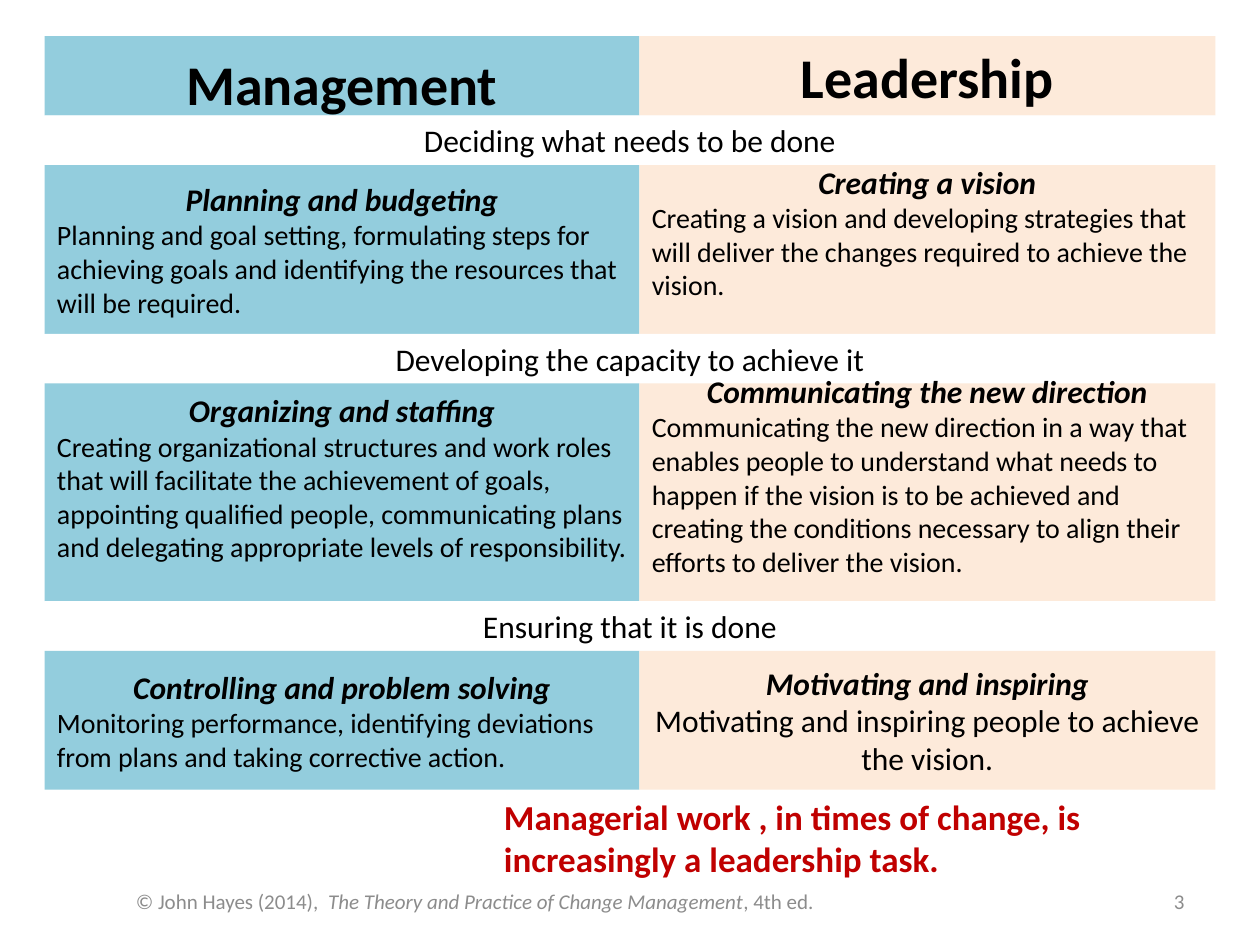
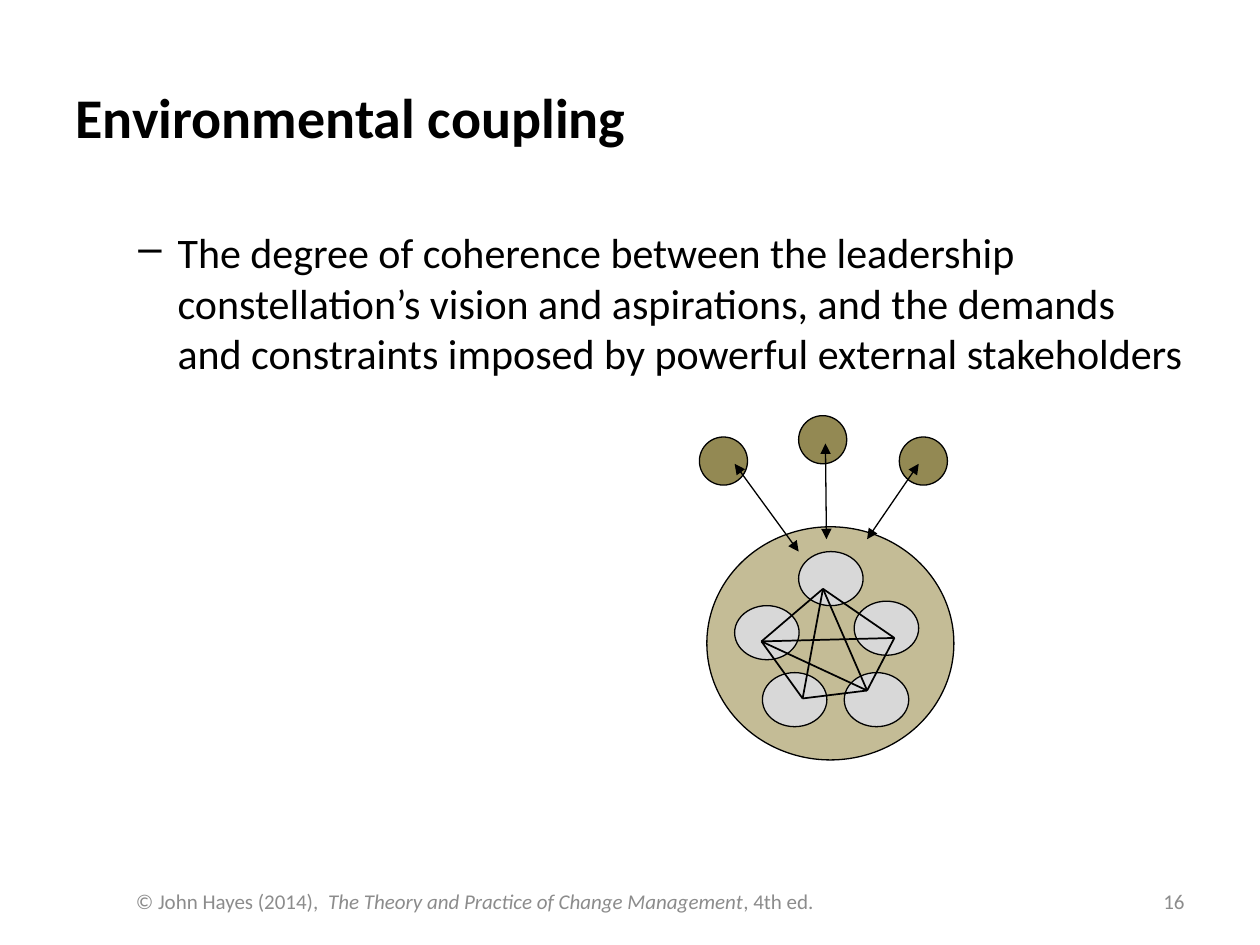
from itertools import combinations

from lxml import etree
from pptx import Presentation
from pptx import util as u
from pptx.dml.color import RGBColor
from pptx.enum import shapes, text
from pptx.oxml.ns import qn

FONT = "Calibri"
BLACK = RGBColor(0x00, 0x00, 0x00)
WHITE = RGBColor(0xFF, 0xFF, 0xFF)
GREY = RGBColor(0x8C, 0x8C, 0x8C)
RED = RGBColor(0xC0, 0x00, 0x00)
BLUE = RGBColor(0x93, 0xCD, 0xDD)
PEACH = RGBColor(0xFD, 0xEA, 0xDA)
SAND = RGBColor(0xC4, 0xBC, 0x96)
SILVER = RGBColor(0xD8, 0xD8, 0xD8)
OLIVE = RGBColor(0x93, 0x89, 0x53)

LEFT, MIDDLE, RIGHT, TOP = 0.9, 12.89, 24.5, 0.73
HEADER_HEIGHT, BAND_HEIGHT = 1.6, 1.0
CENTER = text.PP_ALIGN.CENTER
START = text.PP_ALIGN.LEFT

STAGES = [
    ("Deciding what needs to be done", 3.4,
     ("Planning and budgeting",
      "Planning and goal setting, formulating steps for achieving goals and "
      "identifying the resources that will be required.", 0),
     ("Creating a vision",
      "Creating a vision and developing strategies that will deliver the "
      "changes required to achieve the vision.", 0.7)),
    ("Developing the capacity to achieve it", 4.39,
     ("Organizing and staffing",
      "Creating organizational structures and work roles that will facilitate "
      "the achievement of goals, appointing qualified people, communicating "
      "plans and delegating appropriate levels of responsibility.", 0.6),
     ("Communicating the new direction",
      "Communicating the new direction in a way that enables people to "
      "understand what needs to happen if the vision is to be achieved and "
      "creating the conditions necessary to align their efforts to deliver "
      "the vision.", 0.7)),
    ("Ensuring that it is done", 2.8,
     ("Controlling and problem solving",
      "Monitoring performance, identifying deviations from plans and taking "
      "corrective action.", 0),
     ("Motivating and inspiring",
      "Motivating and inspiring people to achieve the vision.", 0)),
]


class Sketch:
    def __init__(self, deck):
        self.deck = deck
        self.page = None

    def new_page(self, number, title=None):
        layout = self.deck.slide_layouts[5 if title else 6]
        self.page = self.deck.slides.add_slide(layout)
        if title:
            self.title(title)
        footer = self.label(2.49, 17.65, 19.4, 1.02, middle=True)
        para = self.paragraph(footer, "© John Hayes (2014),  ", 12, GREY)
        for words, italic in (("The Theory and Practice of Change Management", True),
                              (", 4th ed.", False)):
            span = para.add_run()
            span.text = words
            span.font.italic = italic
        corner = self.label(18.21, 17.65, 5.92, 1.02, middle=True)
        self.paragraph(corner, str(number), 12, GREY, align=text.PP_ALIGN.RIGHT)

    def title(self, words):
        box = self.page.shapes.title
        box.left, box.top, box.width, box.height = map(u.Cm, (1.27, 0.76, 22.86, 3.18))
        box.text_frame.vertical_anchor = text.MSO_ANCHOR.MIDDLE
        self.paragraph(box.text_frame, words, 32, bold=True)

    def paragraph(self, frame, words, size, color=BLACK, bold=False, italic=False,
                  align=START):
        para = frame.add_paragraph() if frame.text else frame.paragraphs[0]
        para.text = words
        para.alignment = align
        font = para.font
        font.name, font.size, font.color.rgb = FONT, u.Pt(size), color
        font.bold, font.italic = bold, italic
        return para

    def label(self, left, top, width, height, middle=False):
        box = self.page.shapes.add_textbox(*map(u.Cm, (left, top, width, height)))
        frame = box.text_frame
        frame.word_wrap = True
        if middle:
            frame.vertical_anchor = text.MSO_ANCHOR.MIDDLE
        return frame

    def bullet(self, frame, words, size):
        para = self.paragraph(frame, words, size)
        para.space_before = u.Pt(5)
        properties = para._p.get_or_add_pPr()
        properties.set("marL", str(u.Cm(2.06)))
        properties.set("indent", str(u.Cm(-0.79)))
        mark = etree.Element(qn("a:buChar"), char="–")
        properties.find(qn("a:defRPr")).addprevious(mark)

    def shape(self, kind, left, top, width, height, fill, outlined=False):
        shape = self.page.shapes.add_shape(kind, *map(u.Cm, (left, top, width, height)))
        shape.shadow.inherit = False
        shape.fill.solid()
        shape.fill.fore_color.rgb = fill
        if outlined:
            shape.line.color.rgb = BLACK
            shape.line.width = u.Pt(0.75)
        else:
            shape.line.fill.background()
        return shape

    def panel(self, left, top, right, height, fill, lower=0, lift=0):
        shape = self.shape(shapes.MSO_SHAPE.RECTANGLE, left, top, right - left,
                           height, fill)
        frame = shape.text_frame
        frame.word_wrap = True
        frame.vertical_anchor = text.MSO_ANCHOR.MIDDLE
        frame.margin_top = u.Cm(0.13 + lower)
        frame.margin_bottom = u.Cm(0.13 + lift)
        return frame

    def card(self, left, top, right, height, fill, content, size=16, align=START):
        heading, body, lift = content
        frame = self.panel(left, top, right, height, fill, lift=lift)
        self.paragraph(frame, heading, 18, bold=True, italic=True, align=CENTER)
        self.paragraph(frame, body, size, align=align)

    def ellipse(self, left, top, width, height, fill):
        self.shape(shapes.MSO_SHAPE.OVAL, left, top, width, height, fill, outlined=True)

    def line(self, start, end, weight=1.0, arrows=False):
        line = self.page.shapes.add_connector(
            shapes.MSO_CONNECTOR.STRAIGHT, *map(u.Cm, (*start, *end)))
        line.line.color.rgb = BLACK
        line.line.width = u.Pt(weight)
        properties = line._element.spPr
        if arrows:
            outline = properties.find(qn("a:ln"))
            for tag in ("a:headEnd", "a:tailEnd"):
                etree.SubElement(outline, qn(tag), type="triangle")
        etree.SubElement(properties, qn("a:effectLst"))


def build_comparison(sketch):
    sketch.new_page(3)
    for left, right, fill, words, lower in (
            (LEFT, MIDDLE, BLUE, "Management", 0.28),
            (MIDDLE, RIGHT, PEACH, "Leadership", 0)):
        frame = sketch.panel(left, TOP, right, HEADER_HEIGHT, fill, lower=lower)
        sketch.paragraph(frame, words, 32, bold=True, align=CENTER)

    top = TOP + HEADER_HEIGHT
    for stage, height, management, leadership in STAGES:
        band = sketch.panel(LEFT, top, RIGHT, BAND_HEIGHT, WHITE)
        sketch.paragraph(band, stage, 18, align=CENTER)
        top += BAND_HEIGHT
        size, align = (18, CENTER) if stage == STAGES[-1][0] else (16, START)
        sketch.card(LEFT, top, MIDDLE, height, BLUE, management)
        sketch.card(MIDDLE, top, RIGHT, height, PEACH, leadership, size, align)
        top += height

    conclusion = sketch.label(9.91, top, 14.8, 1.96)
    sketch.paragraph(
        conclusion,
        "Managerial work , in times of change, is increasingly a leadership task.",
        20, RED, bold=True)


def build_coupling(sketch):
    sketch.new_page(16, "Environmental coupling")
    body = sketch.label(1.27, 4.45, 22.86, 12.57)
    sketch.bullet(body,
                  "The degree of coherence between the leadership constellation’s "
                  "vision and aspirations, and the demands and constraints imposed "
                  "by powerful external stakeholders", 24)

    sketch.ellipse(14.25, 10.62, 4.98, 4.7, SAND)
    for left, top in ((16.1, 11.12), (17.22, 12.12), (14.81, 12.21),
                      (15.37, 13.56), (17.02, 13.56)):
        sketch.ellipse(left, top, 1.3, 1.09, SILVER)

    members = {"top": (16.59, 11.87), "left": (15.35, 12.93),
               "right": (18.03, 12.86), "lower left": (16.18, 14.08),
               "lower right": (17.48, 13.92)}
    for first, second in combinations(members, 2):
        if (first, second) != ("right", "lower left"):
            sketch.line(members[first], members[second])

    stakeholders = (
        ((16.1, 8.38), (16.64, 8.94), (16.66, 10.87)),
        ((18.13, 8.81), (18.52, 9.35), (17.48, 10.87)),
        ((14.1, 8.81), (14.81, 9.35), (16.1, 11.12)),
    )
    for corner, _, _ in stakeholders:
        sketch.ellipse(*corner, 0.97, 0.97, OLIVE)
    for _, start, end in stakeholders:
        sketch.line(start, end, 0.75, arrows=True)


def main():
    deck = Presentation()
    deck.slide_width, deck.slide_height = u.Cm(25.4), u.Cm(19.05)
    sketch = Sketch(deck)
    build_comparison(sketch)
    build_coupling(sketch)
    deck.save("out.pptx")


if __name__ == "__main__":
    main()
